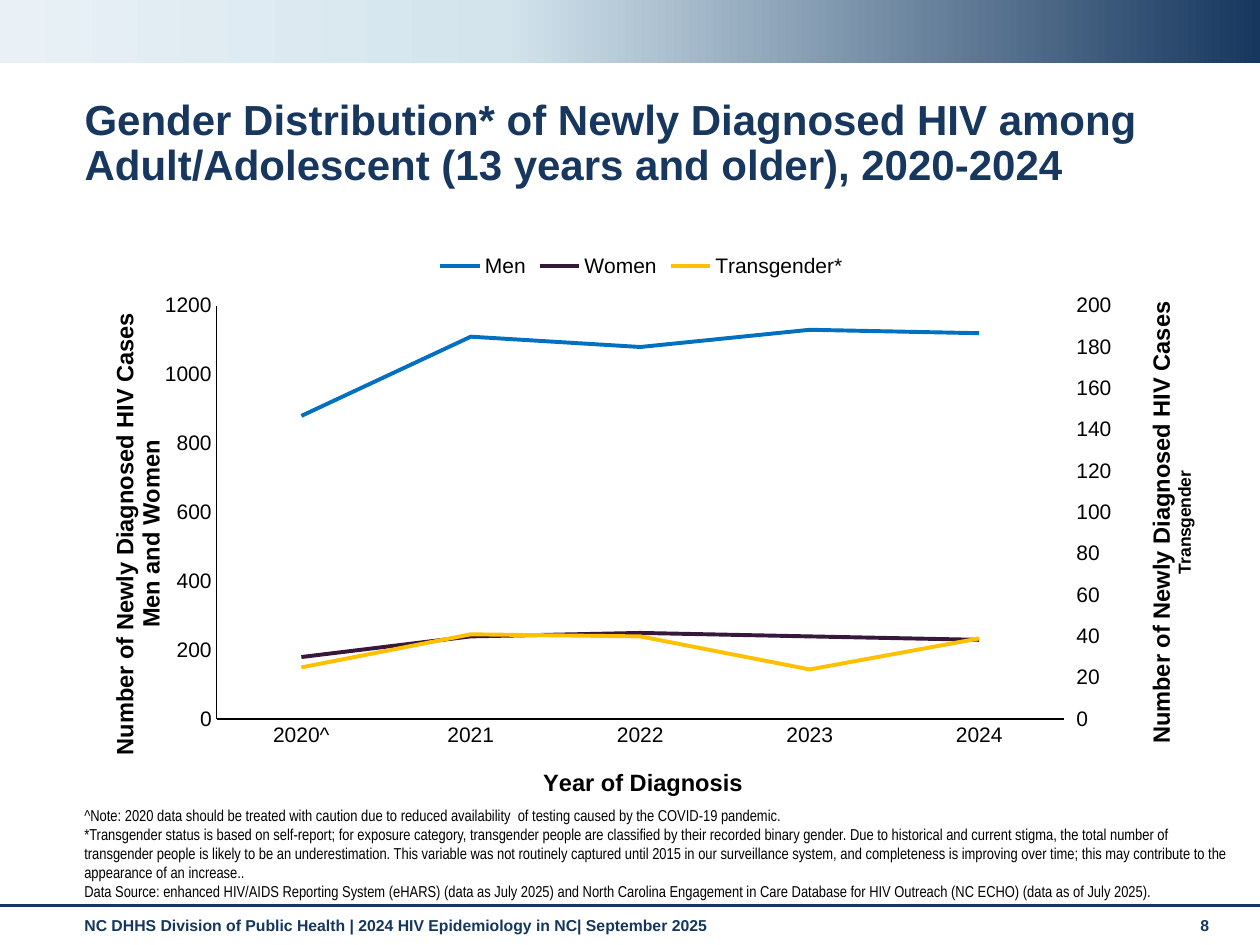
from copy import deepcopy

from lxml import etree
from pptx import Presentation
from pptx.chart.axis import CategoryAxis, ValueAxis
from pptx.chart.data import CategoryChartData
from pptx.dml.color import RGBColor
from pptx.enum.chart import XL_CHART_TYPE, XL_LEGEND_POSITION, XL_TICK_MARK
from pptx.enum.shapes import MSO_CONNECTOR, MSO_SHAPE
from pptx.enum.text import MSO_ANCHOR, MSO_AUTO_SIZE, PP_ALIGN
from pptx.oxml.ns import qn
from pptx.util import Emu, Pt

LINE, TOP = XL_CHART_TYPE.LINE, XL_LEGEND_POSITION.TOP
TICK_NONE, TICK_OUT = XL_TICK_MARK.NONE, XL_TICK_MARK.OUTSIDE
ANCHOR_TOP, ANCHOR_BOTTOM = MSO_ANCHOR.TOP, MSO_ANCHOR.BOTTOM
LEFT, NO_FIT = PP_ALIGN.LEFT, MSO_AUTO_SIZE.NONE
STRAIGHT, RECT = MSO_CONNECTOR.STRAIGHT, MSO_SHAPE.RECTANGLE

NAVY, BLACK = "17375E", "000000"
WIDTH, HEIGHT = 1260, 945
BAND = [(0, NAVY), (0.6, "D3E4ED"), (1, "E9F1F6")]
YEARS = ["2020^", "2021", "2022", "2023", "2024"]
SERIES = [
    ("Men", [880, 1110, 1080, 1130, 1120], "0070C0"),
    ("Women", [180, 240, 250, 240, 230], "37173B"),
    ("Transgender*", [25, 41, 40, 24, 39], "FFC000"),
]
CASES = "Number of Newly Diagnosed HIV Cases"
NOTES = [
    "^Note: 2020 data should be treated with caution due to reduced availability  of testing "
    "caused by the COVID-19 pandemic.",
    "*Transgender status is based on self-report; for exposure category, transgender people are "
    "classified by their recorded binary gender. Due to historical and current stigma, the total "
    "number of transgender people is likely to be an underestimation. This variable was not "
    "routinely captured until 2015 in our surveillance system, and completeness is improving over "
    "time; this may contribute to the appearance of an increase..",
    "Data Source: enhanced HIV/AIDS Reporting System (eHARS) (data as July 2025) and North Carolina "
    "Engagement in Care Database for HIV Outreach (NC ECHO) (data as of July 2025).",
]


def px(n):
    """Turn pixels into EMU."""
    return Emu(round(n * 914400 / 126))


def rgb(color):
    """Turn a hex string into a colour."""
    return RGBColor.from_string(color)


def set_font(font, size, color=BLACK, bold=False, name="Arial"):
    """Format a font."""
    font.name, font.size, font.bold = name, Pt(size), bold
    font.color.rgb = rgb(color)


def fill_text(tf, lines, anchor, size, color, bold=False, name="Arial"):
    """Write paragraphs of one format into a text frame."""
    tf.word_wrap, tf.auto_size, tf.vertical_anchor = True, NO_FIT, anchor
    tf.text = "\n".join(lines)
    for p in tf.paragraphs:
        p.alignment = LEFT
        set_font(p.font, size, color, bold, name)


def add_text(slide, box, lines, anchor, size, color, **style):
    """Add a text box."""
    sp = slide.shapes.add_textbox(*map(px, box))
    fill_text(sp.text_frame, lines, anchor, size, color, **style)


def add_band(slide, box):
    """Add the gradient band."""
    sp = slide.shapes.add_shape(RECT, *map(px, box))
    sp.shadow.inherit = False
    sp.line.fill.background()
    sp.fill.gradient()
    sp.fill.gradient_angle = 180
    stops = sp._element.spPr.find(".//" + qn("a:gsLst"))
    stops.append(deepcopy(stops[-1]))
    for stop, (position, color) in zip(sp.fill.gradient_stops, BAND):
        stop.position = position
        stop.color.rgb = rgb(color)


def add_title(slide, box, text):
    """Place and format the title."""
    sp = slide.shapes.title
    sp.left, sp.top, sp.width, sp.height = map(px, box)
    fill_text(sp.text_frame, [text], ANCHOR_TOP, 24, NAVY, bold=True)
    sp.text_frame.paragraphs[0].line_spacing = 0.9


def add_footer(slide, box, text, number):
    """Add the rule, the footer text and the slide number."""
    x, y, w, h = box
    rule = slide.shapes.add_connector(STRAIGHT, px(x), px(y), px(x + w), px(y))
    rule.line.color.rgb, rule.line.width = rgb(NAVY), Pt(1.75)
    etree.SubElement(rule._element.spPr, qn("a:effectLst"))
    for left, width, words in ((72, 1101, text), (1188, 55, number)):
        add_text(slide, (x + left, y + 4, width, h - 4), [words], ANCHOR_TOP, 9, "15365E", bold=True)


def set_layout(parent, index, **values):
    """Give a chart part a manual layout."""
    layout = parent.find(qn("c:layout"))
    if layout is None:
        layout = etree.Element(qn("c:layout"))
        parent.insert(index, layout)
    manual = etree.SubElement(layout, qn("c:manualLayout"))
    for tag, value in values.items():
        etree.SubElement(manual, qn("c:" + tag)).set("val", str(value))


def title_axis(axis, lines, x, y):
    """Write an axis title of (text, size) lines at a place in the chart."""
    title = axis.axis_title
    tf = title.text_frame
    tf.text = "\n".join(text for text, _ in lines)
    for p, (_, size) in zip(tf.paragraphs, lines):
        set_font(p.font, size, bold=True)
    set_layout(title._element, 1, xMode="edge", yMode="edge", x=x, y=y)


def format_axis(axis):
    """Format an axis line and its labels."""
    axis.has_major_gridlines = False
    axis.major_tick_mark = axis.minor_tick_mark = TICK_NONE
    axis.format.line.color.rgb, axis.format.line.width = rgb(BLACK), Pt(0.75)
    set_font(axis.tick_labels.font, 12)


def scale_axis(axis, top, unit):
    """Set the range of a value axis from zero."""
    axis.minimum_scale, axis.maximum_scale, axis.major_unit = 0, top, unit


def add_right_axis(chart):
    """Move the last series to a second axis and return that axis."""
    first = chart.plots[0]._element
    second = deepcopy(first)
    for ser in second.findall(qn("c:ser")):
        second.remove(ser)
    last = first.findall(qn("c:ser"))[-1]
    second.find(qn("c:axId")).addprevious(last)
    first.addnext(second)
    cat, val = (deepcopy(a._element) for a in (chart.category_axis, chart.value_axis))
    chart.value_axis._element.addnext(cat)
    cat.addnext(val)
    for axis, own, other in ((cat, "5001", "5002"), (val, "5002", "5001")):
        axis.find(qn("c:axId")).set("val", own)
        axis.find(qn("c:crossAx")).set("val", other)
    for ref, own in zip(second.findall(qn("c:axId")), ("5001", "5002")):
        ref.set("val", own)
    val.find(qn("c:axPos")).set("val", "r")
    val.find(qn("c:crosses")).set("val", "max")
    CategoryAxis(cat).visible = False
    return ValueAxis(val)


def add_case_chart(slide, box):
    """Add the line chart of cases by gender."""
    data = CategoryChartData()
    data.categories = YEARS
    for name, values, _ in SERIES:
        data.add_series(name, values)
    chart = slide.shapes.add_chart(LINE, *map(px, box), data).chart
    set_font(chart.font, 10)
    chart.has_title = False
    chart.has_legend = True
    chart.legend.position, chart.legend.include_in_layout = TOP, False
    set_font(chart.legend.font, 12)
    chart.plots[0].vary_by_categories = False
    for series, (_, _, color) in zip(chart.plots[0].series, SERIES):
        series.smooth = False
        series.format.line.color.rgb, series.format.line.width = rgb(color), Pt(2.25)
    years, left = chart.category_axis, chart.value_axis
    format_axis(years)
    format_axis(left)
    right = add_right_axis(chart)
    right.major_tick_mark = TICK_OUT
    right.format.line.fill.background()
    scale_axis(left, 1200, 200)
    scale_axis(right, 200, 20)
    title_axis(years, [("Year of Diagnosis", 13.5)], 0.41, 0.92)
    title_axis(left, [(CASES, 13.5), ("Men and Women", 13.5)], 0.03, 0.12)
    title_axis(right, [(CASES, 13.5), ("Transgender", 10)], 0.94, 0.1)
    set_layout(chart._chartSpace.chart.plotArea, 0, layoutTarget="inner", xMode="edge",
               yMode="edge", x=0.127, y=0.114, w=0.744, h=0.728)


def main():
    """Build the slide."""
    prs = Presentation()
    prs.slide_width, prs.slide_height = px(WIDTH), px(HEIGHT)
    slide = prs.slides.add_slide(prs.slide_layouts[5])
    add_band(slide, (0, 0, WIDTH, 63))
    add_title(slide, (72, 93, 1188, 76), "Gender Distribution* of Newly Diagnosed HIV among "
              "Adult/Adolescent (13 years and older), 2020-2024")
    add_case_chart(slide, (72, 241, 1139, 568))
    add_text(slide, (72, 881, 1171, 26), NOTES, ANCHOR_BOTTOM, 9, BLACK, name="Arial Narrow")
    add_footer(slide, (0, 906, WIDTH, 39), "NC DHHS Division of Public Health | "
               "2024 HIV Epidemiology in NC| September 2025", "8")
    prs.save("out.pptx")


if __name__ == "__main__":
    main()
